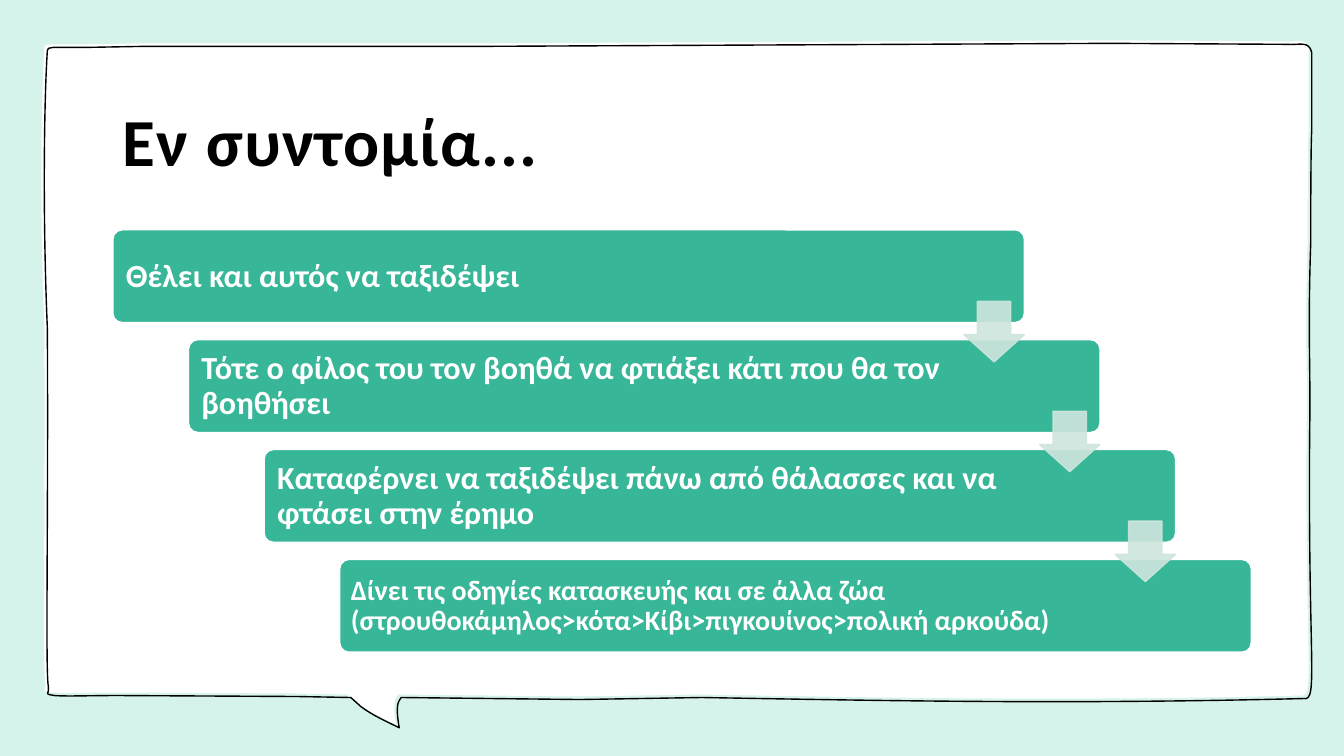
from dataclasses import dataclass
from typing import Any

from lxml.etree import SubElement
from pptx import Presentation
from pptx.dml.color import RGBColor
from pptx.enum.shapes import MSO_SHAPE
from pptx.enum.text import MSO_ANCHOR, PP_ALIGN
from pptx.oxml.ns import qn
from pptx.util import Inches, Pt


@dataclass(frozen=True)
class Theme:
    background: str = "D5F2EB"
    paper: str = "FFFFFF"
    ink: str = "000000"
    bar: str = "38B698"
    arrow: str = "CEE5DD"
    font: str = "Calibri"
    title_size: int = 48
    step_size: int = 23
    small_step_size: int = 20


@dataclass(frozen=True)
class Step:
    text: str
    text_width: float
    size: int
    inset: float = 0.1


@dataclass(frozen=True)
class Box:
    left: float
    top: float
    width: float
    height: float

    def lengths(self) -> list[int]:
        return [Inches(value) for value in (self.left, self.top, self.width, self.height)]


THEME = Theme()
STEPS = [
    Step("Θέλει και αυτός να ταξιδέψει", 7.97, THEME.step_size),
    Step("Τότε ο φίλος του τον βοηθά να φτιάξει κάτι που θα τον βοηθήσει", 7.63, THEME.step_size),
    Step("Καταφέρνει να ταξιδέψει πάνω από θάλασσες και να φτάσει στην έρημο", 7.64, THEME.step_size),
    Step("Δίνει τις οδηγίες κατασκευής και σε άλλα ζώα "
         "(στρουθοκάμηλος>κότα>Κίβι>πιγκουίνος>πολική αρκούδα)", 7.63, THEME.small_step_size, 0.08),
]
FIRST_BAR = Box(1.12, 2.28, 9.04, 0.92)
STEP_RIGHT, STEP_DOWN = 0.75, 1.09
ARROW_SIDE, ARROW_DROP = 0.6, 0.71
TEXT_OFFSET = 0.03

# Two numbers are a line's end; six are a Bezier curve's two controls and end.
BUBBLE = [
    (10.99, 0.4), (12.73, 0.41), (12.86, 0.42, 12.95, 0.37, 12.98, 0.49), (12.98, 0.76),
    (12.98, 0.93, 12.98, 1.1, 12.98, 1.27), (12.97, 1.4, 12.97, 2.33, 12.97, 2.39),
    (12.94, 3.27, 12.97, 3.63, 12.96, 4.22), (12.94, 6.54, 13.05, 6.93, 12.9, 6.9),
    (10.53, 6.96, 8.69, 6.92, 6.93, 6.89), (5.72, 6.91), (3.95, 6.89),
    (3.93, 6.92), (3.9, 6.97, 3.91, 7.07, 3.93, 7.19),
    (3.81, 7.13, 3.67, 7.07, 3.55, 6.98), (3.45, 6.89), (2.92, 6.88), (1.14, 6.87),
    (0.86, 6.87, 0.63, 6.88, 0.51, 6.87), (0.4, 6.85, 0.46, 6.87, 0.45, 6.78),
    (0.42, 6.63, 0.45, 5.19, 0.44, 3.23), (0.39, 2.04, 0.41, 0.93, 0.44, 0.47),
    (0.45, 0.46, 0.45, 0.45, 0.45, 0.45), (0.5, 0.44), (0.74, 0.44), (0.86, 0.44),
    (1.4, 0.43), (4.77, 0.43), (10.99, 0.4),
]
OUTLINE_SHIFT = 0.03


def apply_format(target: Any, values: dict[str, Any]) -> None:
    for name, value in values.items():
        setattr(target, name, value)


def paint(shape: Any, fill: str | None, line: str | None) -> None:
    shape.shadow.inherit = False
    for color, style in ((fill, shape.fill), (line, shape.line.fill)):
        if color is None:
            style.background()
        else:
            style.solid()
            style.fore_color.rgb = RGBColor.from_string(color)
    if line is not None:
        shape.line.width = Pt(1)


def add_bubble(slide: Any, shift: float, fill: str | None, line: str | None) -> None:
    """Draw the outline with straight sides, then bend the sides that are curves."""
    segments = [[Inches(value + shift) for value in segment] for segment in BUBBLE]
    builder = slide.shapes.build_freeform(*segments[0], scale=1.0)
    builder.add_line_segments([segment[-2:] for segment in segments[1:]], close=True)
    shape = builder.convert_to_shape()
    sides = list(shape.element.spPr.iter(qn("a:lnTo")))
    for side, segment in zip(sides, segments[1:]):
        if len(segment) == 6:
            curve = side.getparent().makeelement(qn("a:cubicBezTo"))
            for x, y in zip(segment[::2], segment[1::2]):
                SubElement(curve, qn("a:pt"), x=str(x - shape.left), y=str(y - shape.top))
            side.getparent().replace(side, curve)
    paint(shape, fill, line)


def add_text(slide: Any, box: Box, text: str, size: int, color: str, inset: float = 0.1,
             vertical_inset: float = 0.1, line_spacing: float = 1.0) -> Any:
    frame = slide.shapes.add_textbox(*box.lengths()).text_frame
    apply_format(frame, {
        "word_wrap": True, "vertical_anchor": MSO_ANCHOR.MIDDLE,
        "margin_left": Inches(inset), "margin_right": Inches(inset),
        "margin_top": Inches(vertical_inset), "margin_bottom": Inches(vertical_inset),
    })
    paragraph = frame.paragraphs[0]
    apply_format(paragraph, {"alignment": PP_ALIGN.LEFT, "line_spacing": line_spacing})
    run = paragraph.add_run()
    run.text = text
    apply_format(run.font, {"name": THEME.font, "size": Pt(size), "bold": True})
    run.font.color.rgb = RGBColor.from_string(color)
    return run


def add_step(slide: Any, step: Step, bar: Box) -> None:
    shape = slide.shapes.add_shape(MSO_SHAPE.ROUNDED_RECTANGLE, *bar.lengths())
    shape.adjustments[0] = 0.1
    paint(shape, THEME.bar, THEME.paper)
    text_box = Box(bar.left + TEXT_OFFSET, bar.top + TEXT_OFFSET, step.text_width, 0.87)
    add_text(slide, text_box, step.text, step.size, THEME.paper, step.inset, step.inset, 0.9)


def add_arrow(slide: Any, bar: Box) -> None:
    """Place a translucent arrow at the bar's lower right corner."""
    box = Box(bar.left + bar.width - ARROW_SIDE, bar.top + ARROW_DROP, ARROW_SIDE, ARROW_SIDE)
    shape = slide.shapes.add_shape(MSO_SHAPE.DOWN_ARROW, *box.lengths())
    for index, adjustment in enumerate((0.55, 0.45)):
        shape.adjustments[index] = adjustment
    paint(shape, THEME.arrow, THEME.arrow)
    for color in shape.element.spPr.iter(qn("a:srgbClr")):
        SubElement(color, qn("a:alpha"), val="90000")


def main() -> None:
    presentation = Presentation()
    apply_format(presentation, {"slide_width": Inches(13.33), "slide_height": Inches(7.5)})
    slide = presentation.slides.add_slide(presentation.slide_layouts[6])
    slide.background.fill.solid()
    slide.background.fill.fore_color.rgb = RGBColor.from_string(THEME.background)

    add_bubble(slide, 0, THEME.paper, None)
    add_bubble(slide, OUTLINE_SHIFT, None, THEME.ink)
    title = add_text(slide, Box(1.12, 0.61, 11.3, 1.55), "Εν συντομία...", THEME.title_size,
                     THEME.ink, vertical_inset=0.05)
    title.font._element.set("spc", "100")

    bars = [Box(FIRST_BAR.left + index * STEP_RIGHT, FIRST_BAR.top + index * STEP_DOWN,
                FIRST_BAR.width, FIRST_BAR.height) for index in range(len(STEPS))]
    for step, bar in zip(STEPS, bars):
        add_step(slide, step, bar)
    for bar in bars[:-1]:
        add_arrow(slide, bar)
    presentation.save("out.pptx")


if __name__ == "__main__":
    main()
